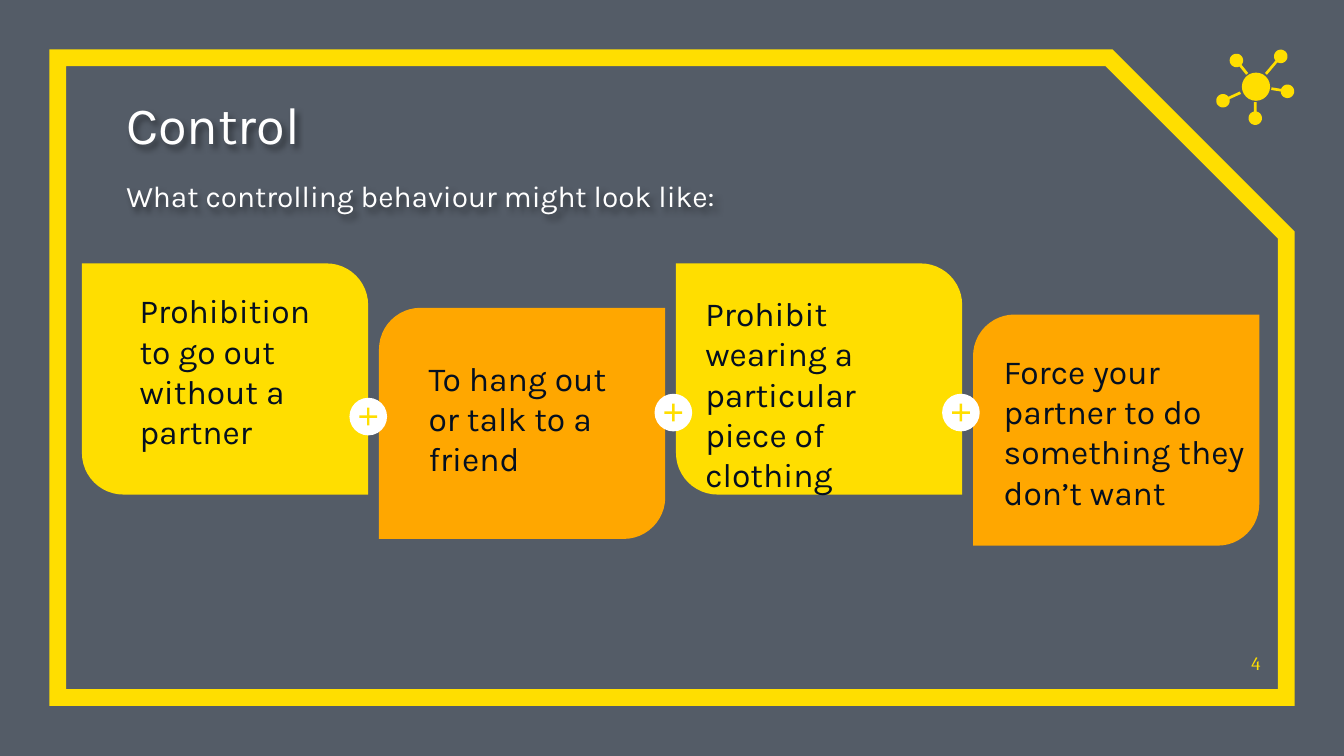
from math import asin, atan2, cos, pi, sin

from lxml import etree
from pptx import Presentation
from pptx.dml.color import RGBColor
from pptx.enum.shapes import MSO_SHAPE
from pptx.enum.text import MSO_ANCHOR, MSO_AUTO_SIZE, PP_ALIGN
from pptx.oxml import parse_xml
from pptx.oxml.ns import qn
from pptx.util import Inches, Pt

CARD = MSO_SHAPE.ROUND_2_DIAG_RECTANGLE
FRAME = MSO_SHAPE.SNIP_1_RECTANGLE
OVAL = MSO_SHAPE.OVAL
PLUS = MSO_SHAPE.MATH_PLUS
TOP, BOTTOM = MSO_ANCHOR.TOP, MSO_ANCHOR.BOTTOM
LEFT, RIGHT = PP_ALIGN.LEFT, PP_ALIGN.RIGHT
NO_FIT = MSO_AUTO_SIZE.NONE

SLATE, NAVY, WHITE = "545C67", "040F20", "FFFFFF"
YELLOW, ORANGE = "FFDE00", "FFA700"
CARD_W, CARD_H, CORNER = 2.13, 1.72, 0.18

# Card left, top, colour, text box (left, top, width, height), text
CARDS = [
    (0.61, 1.96, YELLOW, (0.94, 2.06, 1.59, 1.41),
     "Prohibition to go out without a partner"),
    (2.82, 2.29, ORANGE, (3.09, 2.56, 1.59, 0.5),
     "To hang out or talk to a friend"),
    (5.03, 1.96, YELLOW, (5.15, 2.08, 1.96, 0.5),
     "Prohibit wearing a particular piece of clothing"),
    (7.24, 2.34, ORANGE, (7.37, 2.51, 2.13, 0.5),
     "Force your partner to do something they don’t want"),
]
BADGES = [(2.6, 2.96), (4.87, 2.93), (7.01, 2.93)]

# Node centre and inner end of its spoke
NODES = [
    ((9.53, 0.42), (9.42, 0.55)),
    ((9.2, 0.45), (9.28, 0.55)),
    ((9.1, 0.75), (9.23, 0.69)),
    ((9.34, 0.88), (9.34, 0.76)),
    ((9.58, 0.68), (9.46, 0.66)),
]

SOFT_SHADOW = (
    '<a:effectLst xmlns:a="http://schemas.openxmlformats.org/drawingml/2006/main">'
    '<a:outerShdw blurRad="38100" dist="38100" dir="2700000" algn="tl">'
    '<a:srgbClr val="000000"><a:alpha val="43000"/></a:srgbClr>'
    '</a:outerShdw></a:effectLst>'
)


def rgb(value):
    return RGBColor.from_string(value)


def paint(s, color):
    s.shadow.inherit = False
    s.fill.solid()
    s.fill.fore_color.rgb = rgb(color)
    s.line.fill.background()


def add_shape(slide, kind, box, color, adjustments=()):
    s = slide.shapes.add_shape(kind, *map(Inches, box))
    paint(s, color)
    for i, value in enumerate(adjustments):
        s.adjustments[i] = value
    return s


def setup_frame(tf, anchor, inset):
    values = {
        "word_wrap": True,
        "auto_size": NO_FIT,
        "vertical_anchor": anchor,
        "margin_left": Inches(inset),
        "margin_top": Inches(inset),
        "margin_right": Inches(inset),
        "margin_bottom": Inches(inset),
    }
    for name, value in values.items():
        setattr(tf, name, value)


def write(p, text, size, color, font="Karla", align=LEFT):
    p.alignment = align
    r = p.add_run()
    r.text = text
    for name, value in {"size": Pt(size), "name": font}.items():
        setattr(r.font, name, value)
    r.font.color.rgb = rgb(color)


def add_text(slide, box, text, size, color, anchor=TOP, inset=0.1, **style):
    tf = slide.shapes.add_textbox(*map(Inches, box)).text_frame
    setup_frame(tf, anchor, inset)
    write(tf.paragraphs[0], text, size, color, **style)


def add_title(slide):
    s = slide.shapes.title
    box = {"left": 0.94, "top": 0.79, "width": 7.35, "height": 0.82}
    for name, value in box.items():
        setattr(s, name, Inches(value))
    # An unfilled shape casts its shadow from the text
    s.fill.background()
    s._element.spPr.append(parse_xml(SOFT_SHADOW))

    tf = s.text_frame
    setup_frame(tf, BOTTOM, 0)
    tf.margin_bottom = Inches(0.02)
    heading, lead = tf.paragraphs[0], tf.add_paragraph()
    heading.space_before, lead.space_before = Pt(0), Pt(12)
    write(heading, "Control", 28, WHITE)
    write(lead, "What controlling behaviour might look like:", 16, WHITE)


def add_frame(slide):
    s = add_shape(slide, FRAME, (0.43, 0.43, 9.14, 4.76), SLATE, [0.277])
    s.fill.background()
    s.line.color.rgb = rgb(YELLOW)
    s.line.width = Pt(9)
    line = s._element.spPr.find(qn("a:ln"))
    etree.SubElement(line, qn("a:miter"), lim="800000")


def add_node(slide, centre, end, radius=0.05, half_width=0.01, steps=40):
    """A round node and its spoke as one outline."""
    (cx, cy), (ex, ey) = centre, end
    angle = atan2(ey - cy, ex - cx)
    gap = asin(half_width / radius)
    turns = [angle + gap + (2 * pi - 2 * gap) * i / steps for i in range(steps + 1)]
    points = [(cx + radius * cos(t), cy + radius * sin(t)) for t in turns]
    dx, dy = half_width * sin(angle), half_width * cos(angle)
    points += [(ex + dx, ey - dy), (ex - dx, ey + dy)]
    points = [(Inches(x), Inches(y)) for x, y in points]
    builder = slide.shapes.build_freeform(*points[0])
    builder.add_line_segments(points[1:], close=True)
    paint(builder.convert_to_shape(), YELLOW)


def add_card(slide, left, top, color, text_box, text):
    corners = [0, CORNER] if color == YELLOW else [CORNER, 0]
    add_shape(slide, CARD, (left, top, CARD_W, CARD_H), color, corners)
    add_text(slide, text_box, text, 18, NAVY)


def add_badge(slide, left, top):
    add_shape(slide, OVAL, (left, top, 0.28, 0.28), WHITE)
    add_shape(slide, PLUS, (left + 0.05, top + 0.05, 0.18, 0.18), YELLOW, [0.1])


def main():
    prs = Presentation()
    prs.slide_width = Inches(10)
    prs.slide_height = prs.slide_width * 9 // 16
    slide = prs.slides.add_slide(prs.slide_layouts[5])
    slide.background.fill.solid()
    slide.background.fill.fore_color.rgb = rgb(SLATE)

    # Frame, title and page number
    add_frame(slide)
    add_title(slide)
    add_text(slide, (9.11, 4.74, 0.27, 0.28), "4", 10, YELLOW, BOTTOM, 0,
             font="Cambria", align=RIGHT)

    # Network icon
    for centre, end in NODES:
        add_node(slide, centre, end)
    add_shape(slide, OVAL, (9.24, 0.54, 0.21, 0.21), YELLOW)

    # Cards, then the plus badges between them
    for card in CARDS:
        add_card(slide, *card)
    for badge in BADGES:
        add_badge(slide, *badge)

    prs.save("out.pptx")


if __name__ == "__main__":
    main()
